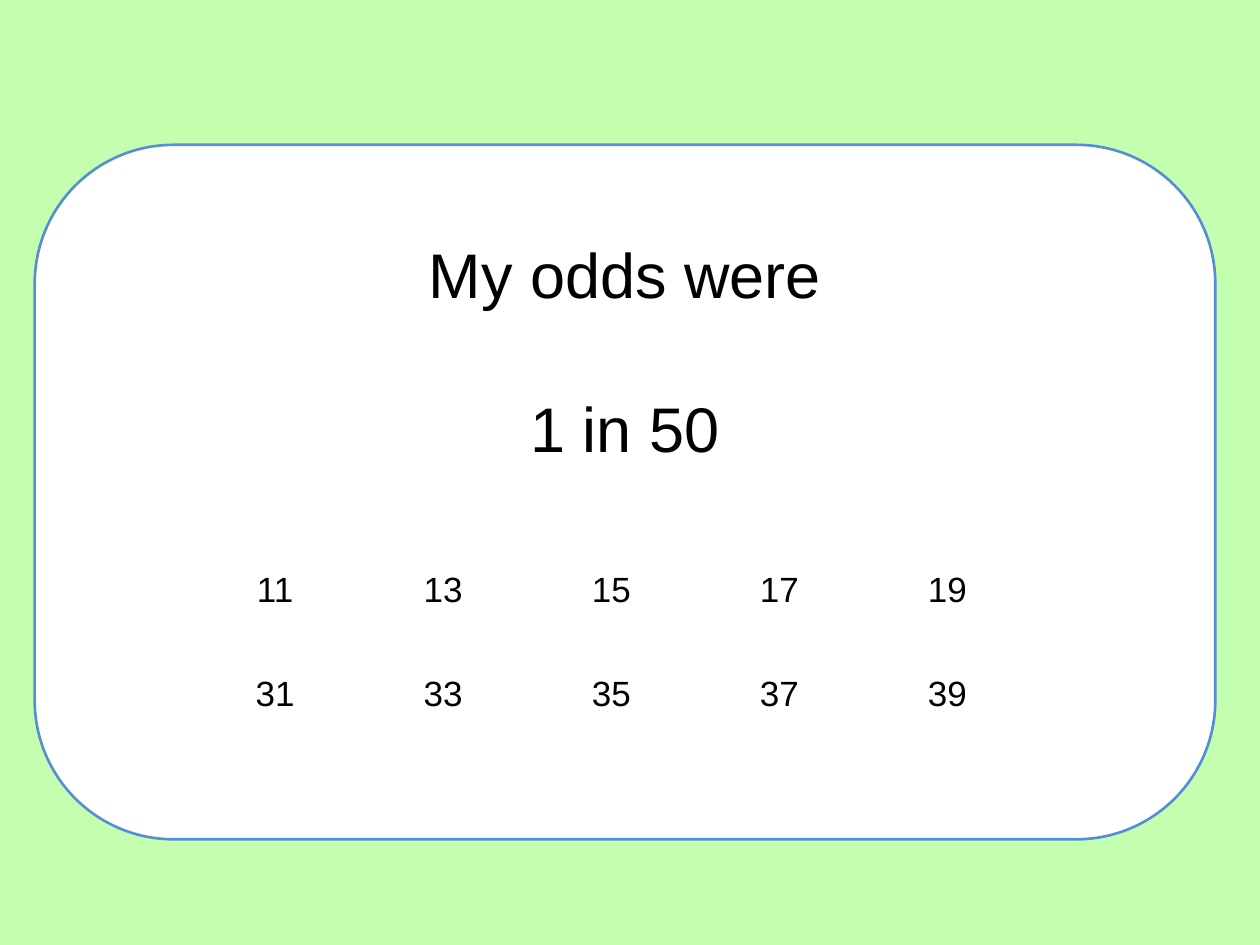
import pptx
import pptx.dml.color
import pptx.enum.shapes
import pptx.enum.text
import pptx.util

Cm = pptx.util.Cm
HEADLINES = ["My odds were", "1 in 50"]
NUMBERS = [[11, 13, 15, 17, 19], [31, 33, 35, 37, 39]]


def color(hex_string):
    return pptx.dml.color.RGBColor.from_string(hex_string)


def add_text(para, text, size):
    para.alignment = pptx.enum.text.PP_ALIGN.CENTER
    span = para.add_run()
    span.text = text
    span.font.name = "Arial"
    span.font.size = pptx.util.Pt(size)
    span.font.color.rgb = color("000000")


def add_card(page, left, top, width, height):
    card = page.shapes.add_shape(
        pptx.enum.shapes.MSO_SHAPE.ROUNDED_RECTANGLE,
        Cm(left), Cm(top), Cm(width), Cm(height))
    card.adjustments[0] = 0.2
    card.shadow.inherit = False
    card.fill.solid()
    card.fill.fore_color.rgb = color("FFFFFF")
    card.line.color.rgb = color("558ED5")
    card.line.width = pptx.util.Pt(1.5)

    frame = card.text_frame
    frame.word_wrap = True
    frame.vertical_anchor = pptx.enum.text.MSO_ANCHOR.TOP
    frame.margin_top = Cm(1)
    for index, headline in enumerate(HEADLINES):
        para = frame.add_paragraph() if index else frame.paragraphs[0]
        if index:
            para.space_before = pptx.util.Pt(45)
        add_text(para, headline, 36)


def add_number_table(page, left, top, width, height):
    """Numbers fill every second column and row, with empty cells between."""
    row_count = 2 * len(NUMBERS) + 1
    column_count = 2 * len(NUMBERS[0])
    table = page.shapes.add_table(
        row_count, column_count,
        Cm(left), Cm(top), Cm(width), Cm(height)).table
    table.first_row = False
    table.horz_banding = False
    for cell in table.iter_cells():
        cell.fill.background()
        cell.margin_top = cell.margin_bottom = 0
        cell.vertical_anchor = pptx.enum.text.MSO_ANCHOR.MIDDLE
    for row, numbers in enumerate(NUMBERS):
        for column, number in enumerate(numbers):
            cell = table.cell(2 * row + 1, 2 * column)
            add_text(cell.text_frame.paragraphs[0], str(number), 20)


def add_odds_page(deck):
    page = deck.slides.add_slide(deck.slide_layouts[6])
    page.background.fill.solid()
    page.background.fill.fore_color.rgb = color("C4FFAF")
    left, top = 0.7, 2.92
    add_card(page, left, top, 23.8, 14)
    add_number_table(page, left + 4, top + 7.4, 16.94, 5.24)


def main():
    deck = pptx.Presentation()
    deck.slide_width = Cm(25.4)
    deck.slide_height = Cm(19.05)
    add_odds_page(deck)
    deck.save("out.pptx")


if __name__ == "__main__":
    main()
